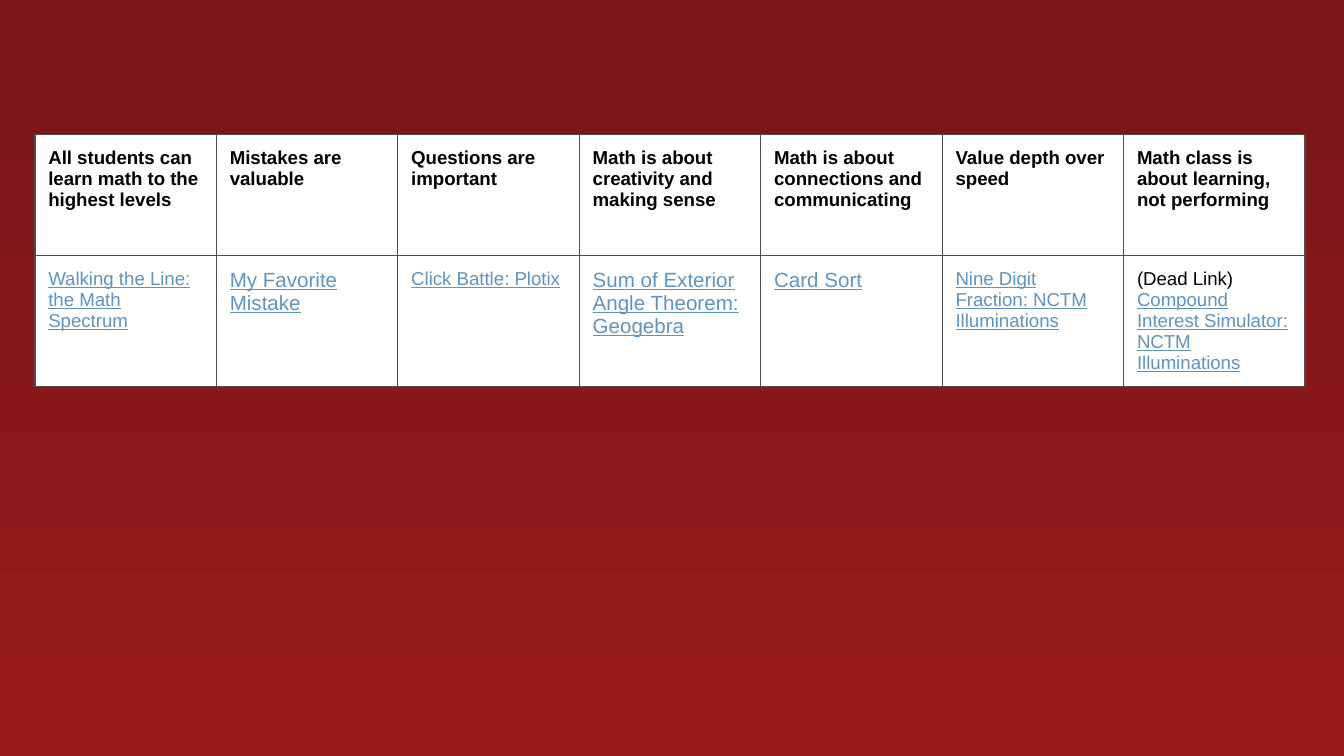
import pptx
import pptx.util
import pptx.dml.color
import pptx.oxml.ns
import lxml.etree

SCALE = 4572
INK = "000000"
LINK = "5D94C1"
EDGE = "534949"

HEADS = [
    "All students can learn math to the highest levels",
    "Mistakes are valuable",
    "Questions are important",
    "Math is about creativity and making sense",
    "Math is about connections and communicating",
    "Value depth over speed",
    "Math class is about learning, not performing",
]
TASKS = [
    ("Walking the Line: the Math Spectrum", 10),
    ("My Favorite Mistake", 11),
    ("Click Battle: Plotix", 10),
    ("Sum of Exterior Angle Theorem: Geogebra", 11),
    ("Card Sort", 11),
    ("Nine Digit Fraction: NCTM Illuminations", 10),
    ("(Dead Link)\nCompound Interest Simulator: NCTM Illuminations", 10),
]


def px(n):
    return pptx.util.Emu(n * SCALE)


def color(code):
    return pptx.dml.color.RGBColor.from_string(code)


def paint_back(slide):
    fill = slide.background.fill
    fill.gradient()
    fill.gradient_angle = 90
    for stop, place, code in zip(fill.gradient_stops, (0, 0.85), ("991B1E", "7D1619")):
        stop.position = place
        stop.color.rgb = color(code)


def add_edges(cell):
    name = pptx.oxml.ns.qn
    props = cell._tc.get_or_add_tcPr()
    for side in ("a:lnL", "a:lnR", "a:lnT", "a:lnB"):
        line = lxml.etree.SubElement(props, name(side), w=str(pptx.util.Pt(0.75)))
        solid = lxml.etree.SubElement(line, name("a:solidFill"))
        lxml.etree.SubElement(solid, name("a:srgbClr"), val=EDGE)


def fill_cell(cell, text, size, head):
    add_edges(cell)
    cell.fill.solid()
    cell.fill.fore_color.rgb = color("FFFFFF")
    cell.margin_left = cell.margin_right = px(20)
    cell.margin_top = cell.margin_bottom = px(20)
    cell.text_frame.text = text
    for para in cell.text_frame.paragraphs:
        plain = head or para.text == "(Dead Link)"
        for run in para.runs:
            font = run.font
            font.name = "Arial"
            font.size = pptx.util.Pt(size)
            font.bold = head
            font.underline = not plain
            font.color.rgb = color(INK if plain else LINK)


def add_grid(slide):
    count = len(HEADS)
    frame = slide.shapes.add_table(2, count, px(52), px(200), px(270 * count), px(360))
    table = frame.table
    table.first_row = False
    table.horz_banding = False
    for col, (head, (task, size)) in enumerate(zip(HEADS, TASKS)):
        fill_cell(table.cell(0, col), head, 10, True)
        fill_cell(table.cell(1, col), task, size, False)


def main():
    deck = pptx.Presentation()
    deck.slide_width = px(2000)
    deck.slide_height = px(1125)
    slide = deck.slides.add_slide(deck.slide_layouts[6])
    paint_back(slide)
    add_grid(slide)
    deck.save("out.pptx")


if __name__ == "__main__":
    main()
